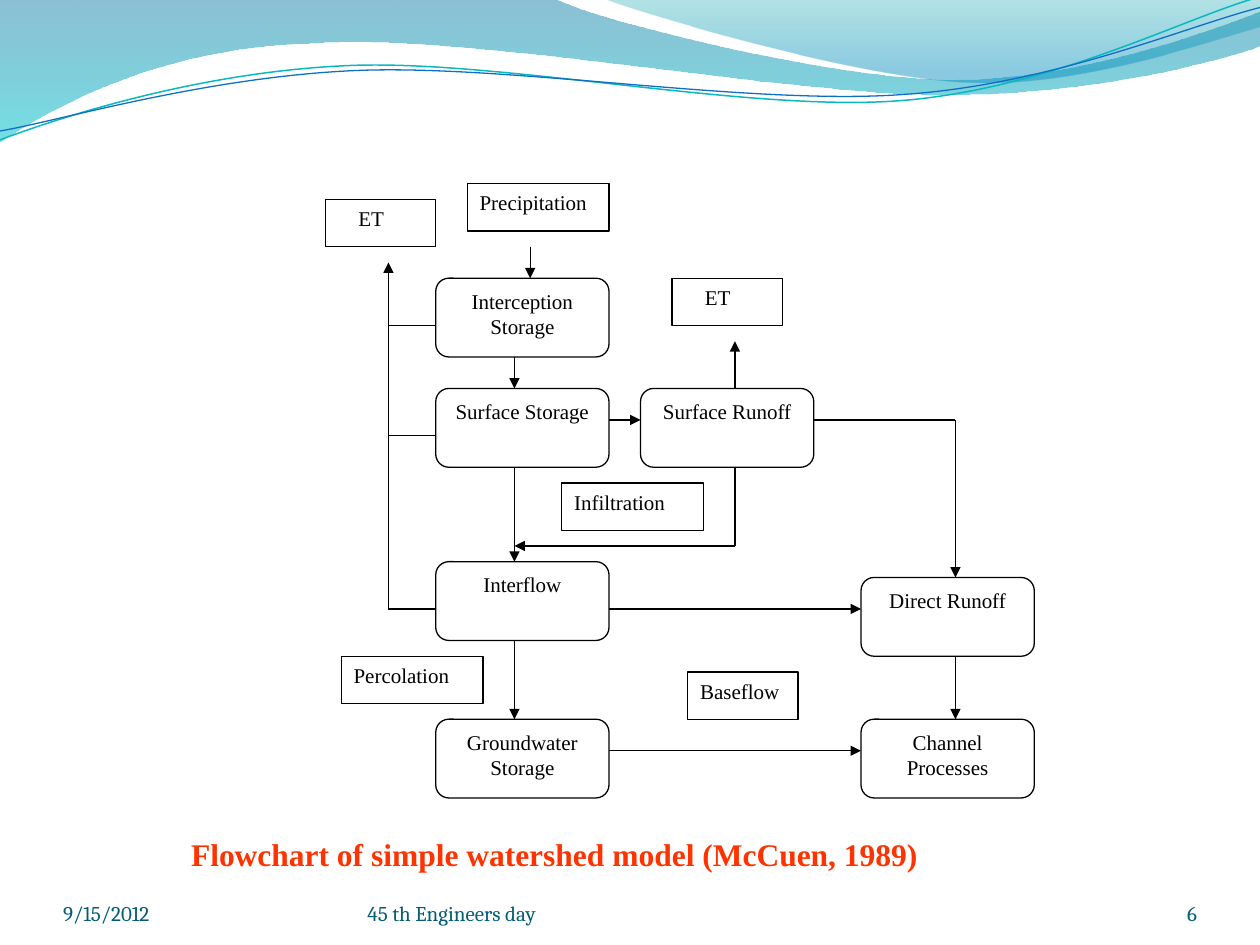
from dataclasses import dataclass
from math import cos, radians, sin

from lxml.etree import SubElement
from pptx import Presentation
from pptx.dml.color import RGBColor as Rgb
from pptx.enum.shapes import MSO_CONNECTOR as Link, MSO_SHAPE as Kind
from pptx.enum.text import MSO_ANCHOR as Anchor, MSO_AUTO_SIZE as Fit, PP_ALIGN as Align
from pptx.oxml.ns import qn
from pptx.util import Inches, Pt


@dataclass(frozen=True)
class Theme:
    ink: str = "000000"
    paper: str = "FFFFFF"
    title: str = "FF3300"
    foot: str = "045D75"
    serif: str = "Times New Roman"
    small: str = "Cambria"
    body: int = 12
    head: int = 18
    rule: float = 0.75


THEME = Theme()
WIDE, HIGH = Inches(10), Inches(7.5)
PART = WIDE // 120  # layout column for title and footer
UNIT, EDGE = WIDE // 80, PART  # chart grid: pitch and offset
NODE = (11, 5)  # columns and rows of a storage box
LABEL = 3  # rows of a label
TILT = -2.7  # degrees, for the thin curves

# Each wave: start, then cubic curves (three points) or straight lines (one)
BANDS = [
    ([(0, 0)], [(4.4, -0.01)],
     [(4.76, 0.17), (6.64, 0.63), (7.58, 0.63)],
     [(8.53, 0.63), (9.58, 0.26), (10, 0.09)], [(10.01, 0.36)],
     [(9.83, 0.44), (8.7, 0.76), (7.46, 0.75)],
     [(6.22, 0.75), (3.82, 0.28), (2.57, 0.34)],
     [(1.29, 0.36), (0.46, 0.83), (-0.01, 1.13)], [(0, 0)]),
    ([(4.79, -0.01)],
     [(5.09, 0.11), (6.82, 0.62), (7.69, 0.65)],
     [(8.56, 0.69), (9.61, 0.32), (10, 0.21)], [(10, 0)], [(4.79, -0.01)]),
]
# Gradient stops: place, colour, opacity in percent
TINTS = [
    ((0, "0074A1", 45), (1, "00C6CF", 55)),
    ((0, "00A1A9", 30), (0.8, "008BBF", 45)),
]
# Colour, width, centre, route
CURVES = [
    ("0AB8BF", 0.85, (4.99, 0.58), ([(0, 1.11)],
     [(0.48, 0.93), (1.58, 0.57), (2.77, 0.52)],
     [(3.95, 0.47), (5.93, 0.89), (7.13, 0.8)],
     [(8.33, 0.71), (9.38, 0.15), (9.98, -0.02)])),
    ("0F6FC6", 0.75, (5, 0.59), ([(0, 1.04)],
     [(0.47, 0.96), (1.64, 0.61), (2.83, 0.56)],
     [(4.03, 0.51), (5.97, 0.84), (7.17, 0.75)],
     [(8.36, 0.67), (9.41, 0.21), (10, 0.06)])),
]

# Column and row on the chart grid
NODES = [
    ("Interception Storage", 27, 17), ("Surface Runoff", 40, 24),
    ("Groundwater Storage", 27, 45), ("Channel Processes", 54, 45),
    ("Interflow", 27, 35), ("Direct Runoff", 54, 36),
    ("Surface Storage", 27, 24),
]
# Column, row, columns wide, left inset in inches
LABELS = [
    ("Precipitation", 29, 11, 9, 0.1), ("Baseflow", 43, 42, 7, 0.1),
    ("Percolation", 21, 41, 9, 0.1), ("Infiltration", 35, 30, 9, 0.1),
    ("ET", 42, 17, 7, 0.26), ("ET", 20, 12, 7, 0.26),
]
ARROWS = [
    (38, 47, 54, 47), (60, 41, 60, 45), (38, 26, 40, 26), (60, 26, 60, 36),
    (38, 38, 54, 38), (32, 40, 32, 45), (32, 22, 32, 24), (32, 29, 32, 35),
    (46, 34, 32, 34), (46, 24, 46, 21), (24, 38, 24, 16), (33, 15, 33, 17),
]
LINES = [
    (51, 26, 60, 26), (46, 29, 46, 34),
    (27, 38, 24, 38), (27, 27, 24, 27), (27, 20, 24, 20),
]
# Text, first layout column, columns wide, alignment
FEET = [
    ("9/15/2012", 6, 28, Align.LEFT),
    ("45 th Engineers day", 35, 44, Align.LEFT),
    ("6", 104, 10, Align.RIGHT),
]


def spot(step):
    return EDGE + step * UNIT


def turn(route, centre, angle):
    """Rotate every point of a route clockwise about a centre."""
    c, s = cos(radians(angle)), sin(radians(angle))
    cx, cy = centre
    return [[(cx + (x - cx) * c - (y - cy) * s,
              cy + (x - cx) * s + (y - cy) * c) for x, y in leg]
            for leg in route]


def wave(slide, route):
    """Draw a route, joining each leg of three points into a cubic curve."""
    dots = [(Inches(x), Inches(y)) for leg in route for x, y in leg]
    pen = slide.shapes.build_freeform(*dots[0], scale=1.0)
    pen.add_line_segments(dots[1:], close=route[0] == route[-1])
    shape = pen.convert_to_shape()
    shape.shadow.inherit = False
    steps = iter(list(shape.element.spPr.iter(qn("a:lnTo"))))
    for leg in route[1:]:
        nodes = [next(steps) for _ in leg]
        if len(nodes) == 3:
            bend = SubElement(nodes[0].getparent(), qn("a:cubicBezTo"))
            nodes[0].addprevious(bend)
            for node in nodes:
                bend.append(node[0])
                node.getparent().remove(node)
    return shape


def band(slide, route, stops):
    shape = wave(slide, route)
    shape.line.fill.background()
    shape.fill.gradient()
    shape.fill.gradient_angle = 270
    for stop, (place, tint, _) in zip(shape.fill.gradient_stops, stops):
        stop.position = place
        stop.color.rgb = Rgb.from_string(tint)
    tones = shape.element.spPr.iter(qn("a:srgbClr"))
    for tone, (_, _, alpha) in zip(tones, stops):
        SubElement(tone, qn("a:alpha"), val=str(alpha * 1000))


def curve(slide, tint, width, centre, route):
    shape = wave(slide, turn(route, centre, -TILT))
    shape.rotation = TILT
    shape.fill.background()
    stroke(shape, tint, width)


def stroke(shape, tint=THEME.ink, width=THEME.rule):
    shape.line.color.rgb = Rgb.from_string(tint)
    shape.line.width = Pt(width)


def write(shape, text, face, size, tint, align, anchor=Anchor.TOP, bold=False):
    frame = shape.text_frame
    frame.word_wrap = True
    frame.auto_size = Fit.NONE
    frame.vertical_anchor = anchor
    para = frame.paragraphs[0]
    para.text = text
    para.alignment = align
    font = para.font
    font.name, font.size, font.bold = face, Pt(size), bold
    font.color.rgb = Rgb.from_string(tint)
    return frame


def box(slide, kind, text, col, row, cols, rows, align):
    shape = slide.shapes.add_shape(
        kind, spot(col), spot(row), cols * UNIT, rows * UNIT)
    shape.shadow.inherit = False
    shape.fill.solid()
    shape.fill.fore_color.rgb = Rgb.from_string(THEME.paper)
    stroke(shape)
    return write(shape, text, THEME.serif, THEME.body, THEME.ink, align)


def line(slide, ends, arrow=False):
    link = slide.shapes.add_connector(Link.STRAIGHT, *map(spot, ends))
    stroke(link)
    if arrow:
        SubElement(link.element.spPr.find(qn("a:ln")), qn("a:tailEnd"), type="triangle")
    SubElement(link.element.spPr, qn("a:effectLst"))


def title(slide, text):
    shape = slide.shapes.title
    shape.left, shape.top = 17 * PART, Inches(6.58)
    shape.width, shape.height = 85 * PART, Inches(0.4)
    write(shape, text, THEME.serif, THEME.head, THEME.title, Align.LEFT, bold=True)


def foot(slide, text, col, cols, align):
    shape = slide.shapes.add_textbox(
        col * PART, Inches(6.95), cols * PART, Inches(0.4))
    frame = write(shape, text, THEME.small, THEME.body, THEME.foot, align,
                  Anchor.BOTTOM)
    frame.margin_left = frame.margin_right = 0
    frame.margin_top = frame.margin_bottom = 0


def main():
    deck = Presentation()
    deck.slide_width, deck.slide_height = WIDE, HIGH
    slide = deck.slides.add_slide(deck.slide_layouts[5])
    for route, stops in zip(BANDS, TINTS):
        band(slide, route, stops)
    for item in CURVES:
        curve(slide, *item)
    for item in FEET:
        foot(slide, *item)
    for text, col, row in NODES:
        box(slide, Kind.ROUNDED_RECTANGLE, text, col, row, *NODE, Align.CENTER)
    for text, col, row, cols, inset in LABELS:
        frame = box(slide, Kind.RECTANGLE, text, col, row, cols, LABEL, Align.LEFT)
        frame.margin_left = Inches(inset)
    for ends in LINES:
        line(slide, ends)
    for ends in ARROWS:
        line(slide, ends, arrow=True)
    title(slide, "Flowchart of simple watershed model (McCuen, 1989)")
    deck.save("out.pptx")


if __name__ == "__main__":
    main()
